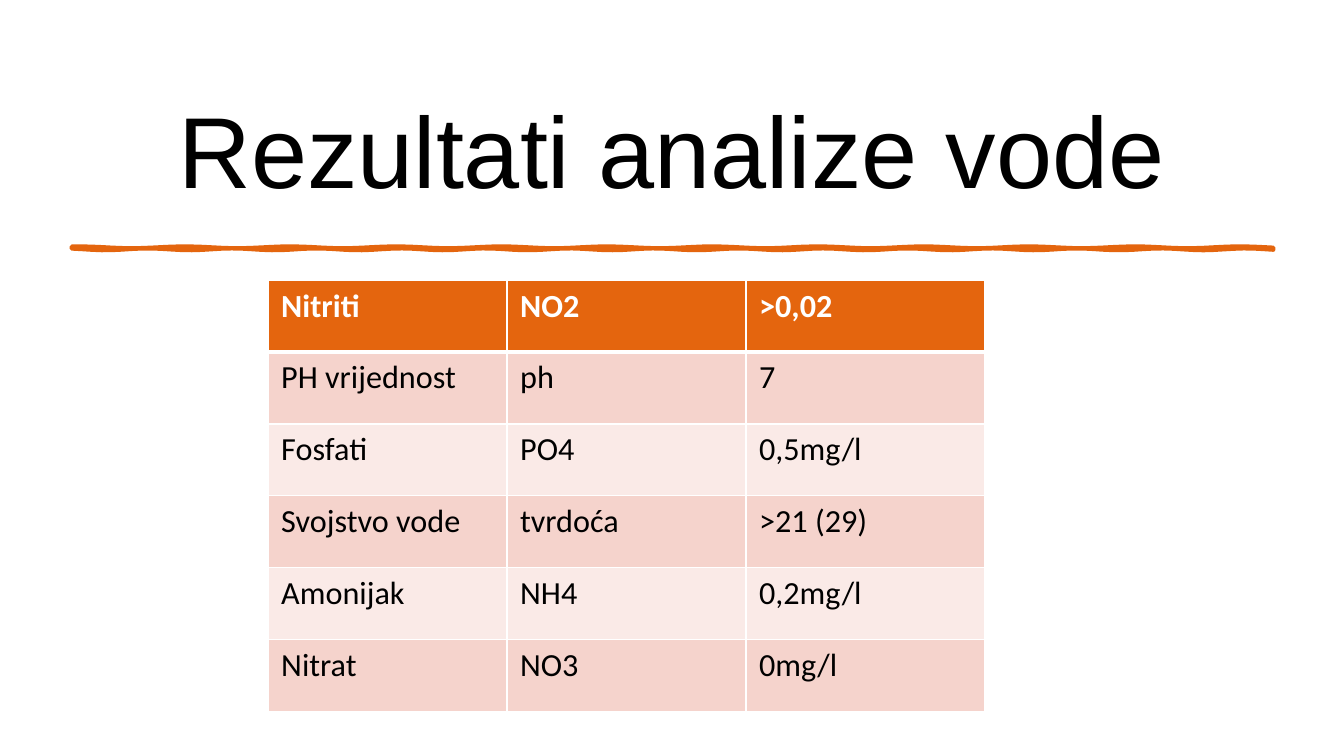
from math import sin

from lxml.etree import SubElement
from pptx import Presentation
from pptx.dml.color import RGBColor
from pptx.enum.text import MSO_ANCHOR, PP_ALIGN
from pptx.oxml.ns import qn
from pptx.util import Inches, Pt

WHITE = RGBColor(0xFF, 0xFF, 0xFF)
BLACK = RGBColor(0x00, 0x00, 0x00)
ORANGE = RGBColor(0xE4, 0x65, 0x0E)
ROSE = RGBColor(0xF5, 0xD3, 0xCC)
PALE_ROSE = RGBColor(0xFA, 0xEA, 0xE7)

RESULTS = [
    ("Nitriti", "NO2", ">0,02"),
    ("PH vrijednost", "ph", "7"),
    ("Fosfati", "PO4", "0,5mg/l"),
    ("Svojstvo vode", "tvrdoća", ">21 (29)"),
    ("Amonijak", "NH4", "0,2mg/l"),
    ("Nitrat", "NO3", "0mg/l"),
]


def write(frame, text, font, size, color, bold=False, align=PP_ALIGN.LEFT):
    para = frame.paragraphs[0]
    para.alignment = align
    span = para.add_run()
    span.text = text
    span.font.name = font
    span.font.size = Pt(size)
    span.font.color.rgb = color
    span.font.bold = bold


class WaterPage:
    """Style and current slide, with places given in percent of its size."""

    title_font = "Arial"
    table_font = "Calibri"

    def __init__(self, deck):
        self.width, self.height = deck.slide_width, deck.slide_height
        self.page = deck.slides.add_slide(deck.slide_layouts[6])
        self.page.background.fill.solid()
        self.page.background.fill.fore_color.rgb = WHITE

    def across(self, percent):
        return round(self.width * percent / 100)

    def down(self, percent):
        return round(self.height * percent / 100)

    def place(self, left, top, width, height):
        return self.across(left), self.down(top), self.across(width), self.down(height)

    def title(self, text, *place):
        frame = self.page.shapes.add_textbox(*self.place(*place)).text_frame
        frame.word_wrap = True
        frame.vertical_anchor = MSO_ANCHOR.MIDDLE
        frame.margin_top = Inches(0.16)
        write(frame, text, self.title_font, 72, BLACK, align=PP_ALIGN.CENTER)

    def brush_line(self, left, right, upper, lower, wave=0.12, steps=120):
        stops = [left + (right - left) * step / steps for step in range(steps + 1)]
        lower_edge = [(stop, lower + wave * sin(stop)) for stop in stops]
        upper_edge = [(stop, upper + wave * sin(stop * 0.8)) for stop in stops]
        outline = [(self.across(x), self.down(y)) for x, y in lower_edge + upper_edge[::-1]]
        builder = self.page.shapes.build_freeform(*outline[0])
        builder.add_line_segments(outline[1:], close=True)
        brush = builder.convert_to_shape()
        brush.shadow.inherit = False
        brush.fill.solid()
        brush.fill.fore_color.rgb = ORANGE
        brush.line.color.rgb = ORANGE
        brush.line.width = Pt(2.75)

    def border(self, cell, side, points):
        line = SubElement(cell._tc.get_or_add_tcPr(), qn(f"a:ln{side}"), w=str(Pt(points)))
        fill = SubElement(line, qn("a:solidFill"))
        SubElement(fill, qn("a:srgbClr"), val=str(WHITE))

    def cell(self, cell, text, row):
        header = row == 0
        cell.margin_left = cell.margin_right = Inches(0.13)
        cell.margin_top = cell.margin_bottom = Inches(0.06)
        for side in "LRTB":
            thick = (header and side == "B") or (row == 1 and side == "T")
            self.border(cell, side, 3 if thick else 1)
        cell.fill.solid()
        cell.fill.fore_color.rgb = ORANGE if header else ROSE if row % 2 else PALE_ROSE
        color = WHITE if header else BLACK
        write(cell.text_frame, text, self.table_font, 23, color, bold=header)

    def table(self, rows, *place):
        shape = self.page.shapes.add_table(len(rows), len(rows[0]), *self.place(*place))
        for row, values in enumerate(rows):
            for column, value in enumerate(values):
                self.cell(shape.table.cell(row, column), value, row)


def main():
    deck = Presentation()
    deck.slide_width, deck.slide_height = Inches(13.33), Inches(7.5)
    water = WaterPage(deck)
    water.title("Rezultati analize vode", 5.18, 9.2, 89.57, 19.2)
    water.brush_line(5.33, 94.75, 32.7, 33)
    water.table(RESULTS, 19.95, 37.07, 53.34, 57.07)
    deck.save("out.pptx")


if __name__ == "__main__":
    main()
